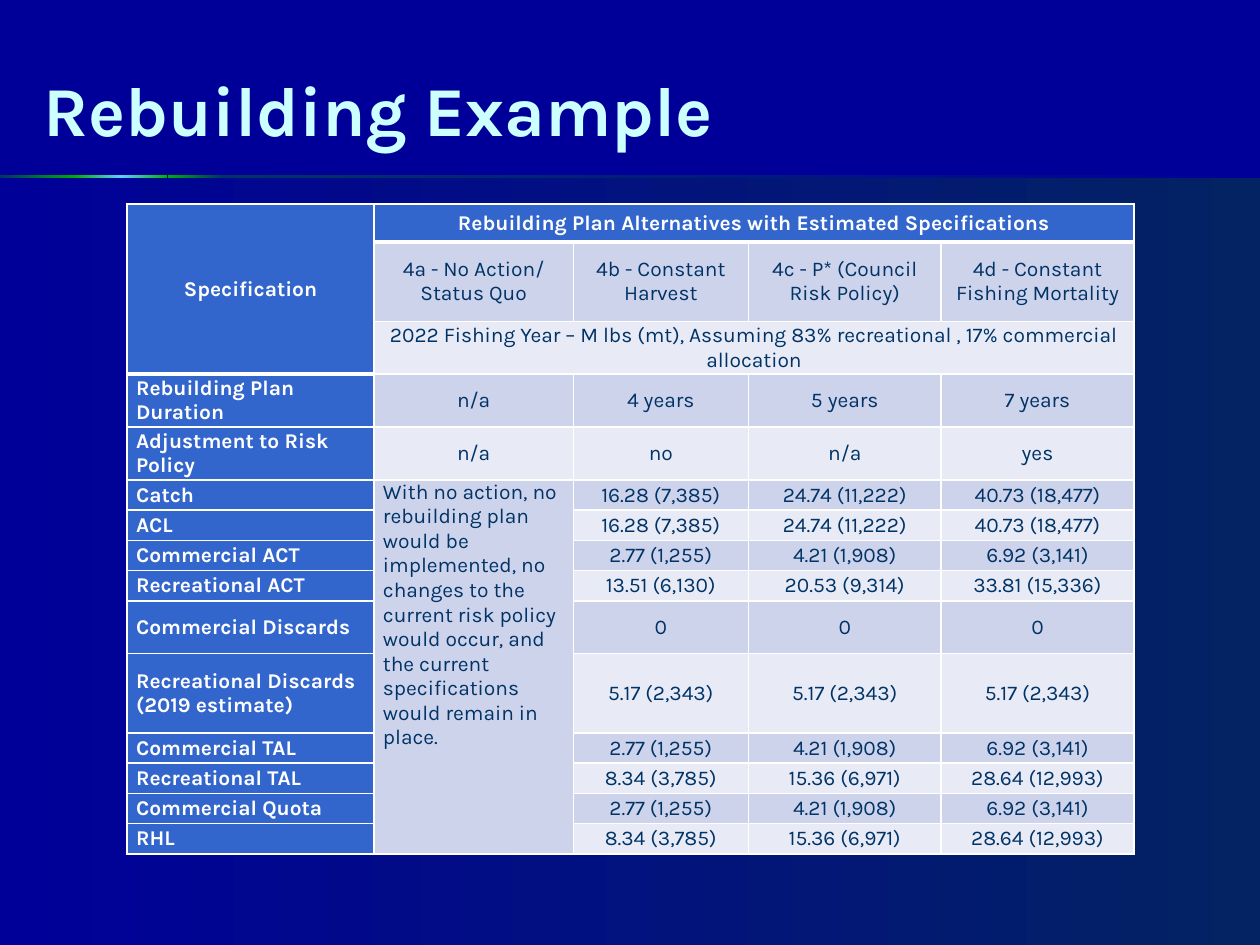
from copy import deepcopy

from lxml import etree
from pptx import Presentation
from pptx.dml.color import RGBColor
from pptx.enum import shapes, text
from pptx.oxml.ns import qn
from pptx.util import Inches, Pt

FONT = "Karla"
BLUE = RGBColor(0x00, 0x00, 0x99)
DARK = RGBColor(0x03, 0x23, 0x63)
NAVY = RGBColor(0x00, 0x33, 0x66)
GREEN = RGBColor(0x00, 0xB0, 0x00)
SKY = RGBColor(0x66, 0xCC, 0xFF)
TITLE = RGBColor(0xCC, 0xFF, 0xFF)
WHITE = RGBColor(0xFF, 0xFF, 0xFF)
HEAD = RGBColor(0x33, 0x66, 0xCC)
BANDS = RGBColor(0xE8, 0xEA, 0xF6), RGBColor(0xCE, 0xD3, 0xEC)

COLS = [1.96, 1.58, 1.39, 1.53, 1.53]
ROWS = [0.3, 0.63] + [0.42] * 3 + [0.24] * 4 + [0.42, 0.63] + [0.24] * 4
HEAD_ROWS = 3
NOTE_ROW = 5
NOTE = ("With no action, no rebuilding plan would be implemented, no changes to "
        "the current risk policy would occur, and the current specifications "
        "would remain in place.")
COMMERCIAL = ["2.77 (1,255)", "4.21 (1,908)", "6.92 (3,141)"]
CATCH = ["16.28 (7,385)", "24.74 (11,222)", "40.73 (18,477)"]
REC_LIMIT = ["8.34 (3,785)", "15.36 (6,971)", "28.64 (12,993)"]
DATA = [
    ["Specification", "Rebuilding Plan Alternatives with Estimated Specifications", "", "", ""],
    ["", "4a - No Action/ Status Quo", "4b - Constant Harvest",
     "4c - P* (Council Risk Policy)", "4d - Constant Fishing Mortality"],
    ["", "2022 Fishing Year – M lbs (mt), Assuming 83% recreational , "
         "17% commercial allocation", "", "", ""],
    ["Rebuilding Plan Duration", "n/a", "4 years", "5 years", "7 years"],
    ["Adjustment to Risk Policy", "n/a", "no", "n/a", "yes"],
    ["Catch", NOTE, *CATCH],
    ["ACL", "", *CATCH],
    ["Commercial ACT", "", *COMMERCIAL],
    ["Recreational ACT", "", "13.51 (6,130)", "20.53 (9,314)", "33.81 (15,336)"],
    ["Commercial Discards", "", "0", "0", "0"],
    ["Recreational Discards (2019 estimate)", ""] + ["5.17 (2,343)"] * 3,
    ["Commercial TAL", "", *COMMERCIAL],
    ["Recreational TAL", "", *REC_LIMIT],
    ["Commercial Quota", "", *COMMERCIAL],
    ["RHL", "", *REC_LIMIT],
]
# first row, first column, last row, last column
MERGES = [(0, 0, 2, 0), (0, 1, 0, 4), (2, 1, 2, 4), (NOTE_ROW, 1, len(DATA) - 1, 1)]


def add_run(p, words, size, color, bold):
    r = p.add_run()
    r.text = words
    r.font.name = FONT
    r.font.size = Pt(size)
    r.font.bold = bold
    r.font.color.rgb = color


def add_gradient_bar(s, x, y, w, h, colors):
    """Rectangle whose colours run from left to right at equal steps."""
    sp = s.shapes.add_shape(shapes.MSO_SHAPE.RECTANGLE,
                            Inches(x), Inches(y), Inches(w), Inches(h))
    sp.shadow.inherit = False
    sp.line.fill.background()
    sp.fill.gradient()
    sp.fill.gradient_angle = 0
    stops = sp._element.spPr.find(".//" + qn("a:gsLst"))
    for _ in colors[2:]:
        stops.append(deepcopy(stops[0]))
    for i, (stop, color) in enumerate(zip(sp.fill.gradient_stops, colors)):
        stop.position = i / (len(colors) - 1)
        stop.color.rgb = color


def add_backdrop(s, x, y, w, h):
    s.background.fill.solid()
    s.background.fill.fore_color.rgb = BLUE
    add_gradient_bar(s, x, y, w, h, [BLUE, DARK])
    for left, right, colors in [(1.77, w, [NAVY, BLUE]), (0, 0.61, [NAVY, GREEN]),
                                (1.33, 1.77, [GREEN, NAVY]),
                                (0.6, 1.33, [GREEN, SKY, GREEN])]:
        add_gradient_bar(s, x + left, y - 0.02, right - left, 0.02, colors)


def add_title(s, x, y, w, h):
    tf = s.shapes.add_textbox(Inches(x), Inches(y), Inches(w), Inches(h)).text_frame
    tf.word_wrap = True
    tf.vertical_anchor = text.MSO_ANCHOR.BOTTOM
    add_run(tf.paragraphs[0], "Rebuilding Example", 40, TITLE, True)


def set_borders(cell, top, bottom):
    tcPr = cell._tc.get_or_add_tcPr()
    for side, width in [("L", 1), ("R", 1), ("T", top), ("B", bottom)]:
        ln = etree.SubElement(tcPr, qn(f"a:ln{side}"), w=str(Pt(width)))
        fill = etree.SubElement(ln, qn("a:solidFill"))
        etree.SubElement(fill, qn("a:srgbClr"), val=str(WHITE))


def fill_cell(cell, row, col, words):
    heading = row == 0 or col == 0
    note = words == NOTE
    # a thick rule closes the header block
    last_head = HEAD_ROWS - 1 if col == 0 else 0
    set_borders(cell, 3 if row == last_head + 1 else 1, 3 if row == last_head else 1)
    cell.fill.solid()
    cell.fill.fore_color.rgb = HEAD if heading else BANDS[row % 2]
    cell.margin_left = cell.margin_right = Inches(0.07)
    cell.margin_top = cell.margin_bottom = 0
    cell.vertical_anchor = text.MSO_ANCHOR.TOP if note else text.MSO_ANCHOR.MIDDLE
    p = cell.text_frame.paragraphs[0]
    p.font.size = Pt(12)
    left = note or (col == 0 and row >= HEAD_ROWS)
    p.alignment = text.PP_ALIGN.LEFT if left else text.PP_ALIGN.CENTER
    if words:
        add_run(p, words, 12, WHITE if heading else NAVY, heading)


def add_alternatives_table(s, x, y):
    frame = s.shapes.add_table(len(ROWS), len(COLS), Inches(x), Inches(y),
                               Inches(sum(COLS)), Inches(sum(ROWS)))
    table = frame.table
    table.first_row = table.horz_banding = False
    for column, width in zip(table.columns, COLS):
        column.width = Inches(width)
    for row, height in zip(table.rows, ROWS):
        row.height = Inches(height)
    for i, line in enumerate(DATA):
        for j, words in enumerate(line):
            fill_cell(table.cell(i, j), i, j, words)
    for top, left, bottom, right in MERGES:
        table.cell(top, left).merge(table.cell(bottom, right))


def main():
    prs = Presentation()
    prs.slide_width, prs.slide_height = Inches(10), Inches(7.5)
    s = prs.slides.add_slide(prs.slide_layouts[6])
    add_backdrop(s, 0, 1.41, 10, 6.09)
    add_alternatives_table(s, 1.01, 1.62)
    add_title(s, 0.25, 0.14, 9.5, 1.1)
    prs.save("out.pptx")


if __name__ == "__main__":
    main()
